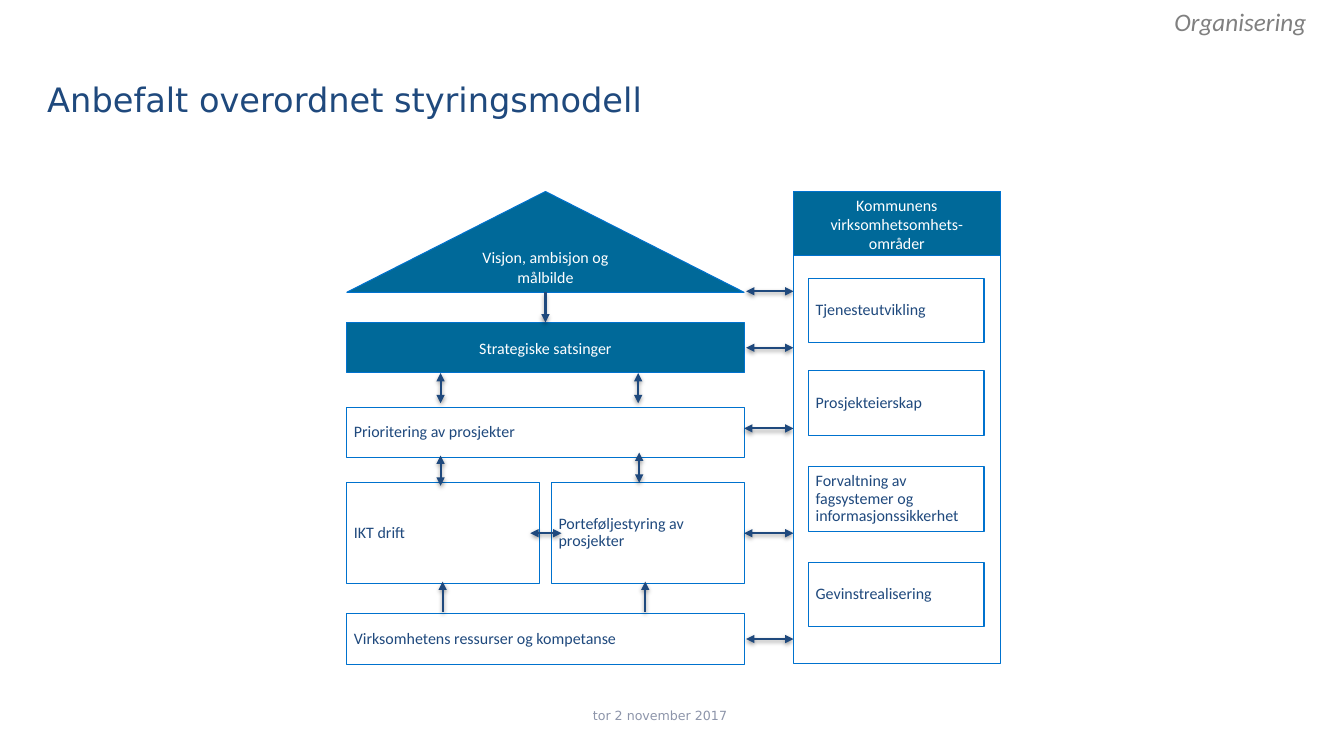
from dataclasses import dataclass

import pptx
import pptx.dml.color
import pptx.enum.shapes
import pptx.enum.text
import pptx.oxml
import pptx.util
from pptx.util import Inches

SHAPE = pptx.enum.shapes.MSO_SHAPE
ALIGN = pptx.enum.text.PP_ALIGN
ANCHOR = pptx.enum.text.MSO_ANCHOR
NAVY, TEAL, BLUE, WHITE = "1F497D", "006999", "0072CE", "FFFFFF"
NS = 'xmlns:a="http://schemas.openxmlformats.org/drawingml/2006/main"'
SHADOW = (
    f'<a:effectLst {NS}><a:outerShdw blurRad="39370" dist="20320" dir="5400000" '
    'rotWithShape="0"><a:srgbClr val="000000"><a:alpha val="38000"/></a:srgbClr>'
    '</a:outerShdw></a:effectLst>'
)


@dataclass
class Box:
    text: str
    left: float
    top: float
    width: float
    height: float
    filled: bool = False
    kind: SHAPE = SHAPE.RECTANGLE


@dataclass
class Arrow:
    x1: float
    y1: float
    x2: float
    y2: float
    double: bool = True


@dataclass
class Label:
    text: str
    left: float
    top: float
    width: float
    height: float
    size: float
    color: str
    font: str = "DejaVu Sans"
    align: ALIGN = ALIGN.LEFT
    anchor: ANCHOR = ANCHOR.MIDDLE
    italic: bool = False


def rgb(color: str) -> pptx.dml.color.RGBColor:
    return pptx.dml.color.RGBColor.from_string(color)


def write(frame, text: str, size: float, color: str, font: str):
    frame.word_wrap = True
    frame.text = text
    paragraph = frame.paragraphs[0]
    style = paragraph.runs[0].font
    style.size = pptx.util.Pt(size)
    style.name = font
    style.color.rgb = rgb(color)
    return paragraph


def draw_box(slide, box: Box) -> None:
    shape = slide.shapes.add_shape(
        box.kind, Inches(box.left), Inches(box.top), Inches(box.width), Inches(box.height))
    shape.shadow.inherit = False
    shape.fill.solid()
    shape.fill.fore_color.rgb = rgb(TEAL if box.filled else WHITE)
    shape.line.color.rgb = rgb(BLUE)
    shape.line.width = pptx.util.Pt(0.75)
    if not box.text:
        return
    frame = shape.text_frame
    frame.vertical_anchor = ANCHOR.MIDDLE
    paragraph = write(frame, box.text, 11.4, WHITE if box.filled else NAVY, "Calibri")
    if box.filled:
        paragraph.alignment = ALIGN.CENTER
        frame.margin_left = frame.margin_right = Inches(0.09)
    else:
        paragraph.alignment = ALIGN.LEFT
        paragraph.line_spacing = 0.9
        paragraph.space_after = pptx.util.Pt(2.2)
        frame.margin_left, frame.margin_right = Inches(0.07), Inches(0.19)
        frame.margin_top = frame.margin_bottom = Inches(0.03)


def draw_arrow(slide, arrow: Arrow) -> None:
    connector = slide.shapes.add_connector(
        pptx.enum.shapes.MSO_CONNECTOR.STRAIGHT,
        Inches(arrow.x1), Inches(arrow.y1), Inches(arrow.x2), Inches(arrow.y2))
    connector.line.color.rgb = rgb(NAVY)
    connector.line.width = pptx.util.Pt(1.5)
    outline = connector.line._get_or_add_ln()
    for end in ("headEnd", "tailEnd") if arrow.double else ("tailEnd",):
        outline.append(pptx.oxml.parse_xml(f'<a:{end} {NS} type="triangle"/>'))
    connector._element.spPr.append(pptx.oxml.parse_xml(SHADOW))


def draw_label(slide, label: Label) -> None:
    textbox = slide.shapes.add_textbox(
        Inches(label.left), Inches(label.top), Inches(label.width), Inches(label.height))
    frame = textbox.text_frame
    frame.vertical_anchor = label.anchor
    paragraph = write(frame, label.text, label.size, label.color, label.font)
    paragraph.alignment = label.align
    paragraph.runs[0].font.italic = label.italic


HOUSE, HOUSE_WIDTH, ROOM_WIDTH = 3.44, 3.94, 1.91
AREA, AREA_WIDTH = 7.87, 2.05

LABELS = [
    Label("Anbefalt overordnet styringsmodell", 0.37, 0.36, 10.09, 1.25, 24, NAVY),
    Label("tor 2 november 2017", 4.99, 6.9, 3.11, 0.4, 9, "8D95AA", align=ALIGN.CENTER),
    Label("Organisering", 11.55, 0.01, 1.78, 0.4, 18, "808080", "Calibri",
          anchor=ANCHOR.TOP, italic=True),
]

HOUSE_BOXES = [
    Box("Visjon, ambisjon og målbilde", HOUSE, 1.9, HOUSE_WIDTH, 1, True,
        SHAPE.ISOSCELES_TRIANGLE),
    Box("Strategiske satsinger", HOUSE, 3.2, HOUSE_WIDTH, 0.5, True),
    Box("IKT drift", HOUSE, 4.79, ROOM_WIDTH, 1),
    Box("Porteføljestyring av prosjekter", 5.47, 4.79, ROOM_WIDTH, 1),
    Box("Prioritering av prosjekter", HOUSE, 4.04, HOUSE_WIDTH, 0.5),
    Box("Virksomhetens ressurser og kompetanse", HOUSE, 6.09, HOUSE_WIDTH, 0.5),
]

HOUSE_ARROWS = [
    Arrow(5.41, 2.9, 5.41, 3.2, False),
    *[Arrow(x, y, x, y + 0.3)
      for x, y in ((4.37, 3.7), (6.33, 3.7), (4.37, 4.52), (6.34, 4.49))],
    *[Arrow(x, 6.07, x, 5.77, False) for x in (4.39, 6.4)],
    Arrow(5.26, 5.29, 5.57, 5.29),
]

AREA_ARROWS = [
    Arrow(AREA, y, x, y)
    for x, y in ((7.4, 2.89), (7.4, 3.45), (7.38, 4.25), (7.38, 5.29), (7.4, 6.34))
]

AREA_TASKS = {
    "Tjenesteutvikling": 2.76,
    "Prosjekteierskap": 3.68,
    "Forvaltning av fagsystemer og informasjonssikkerhet": 4.63,
    "Gevinstrealisering": 5.58,
}

AREA_BOXES = [
    Box("", AREA, 1.9, AREA_WIDTH, 4.68),
    Box("Kommunens virksomhetsomhets-områder", AREA, 1.9, AREA_WIDTH, 0.64, True),
    *[Box(task, 8.02, top, 1.74, 0.64) for task, top in AREA_TASKS.items()],
]


def main() -> None:
    presentation = pptx.Presentation()
    presentation.slide_width = Inches(13.33)
    presentation.slide_height = Inches(7.5)
    slide = presentation.slides.add_slide(presentation.slide_layouts[6])
    for label in LABELS:
        draw_label(slide, label)
    for box in HOUSE_BOXES:
        draw_box(slide, box)
    for arrow in HOUSE_ARROWS + AREA_ARROWS:
        draw_arrow(slide, arrow)
    for box in AREA_BOXES:
        draw_box(slide, box)
    presentation.save("out.pptx")


if __name__ == "__main__":
    main()
